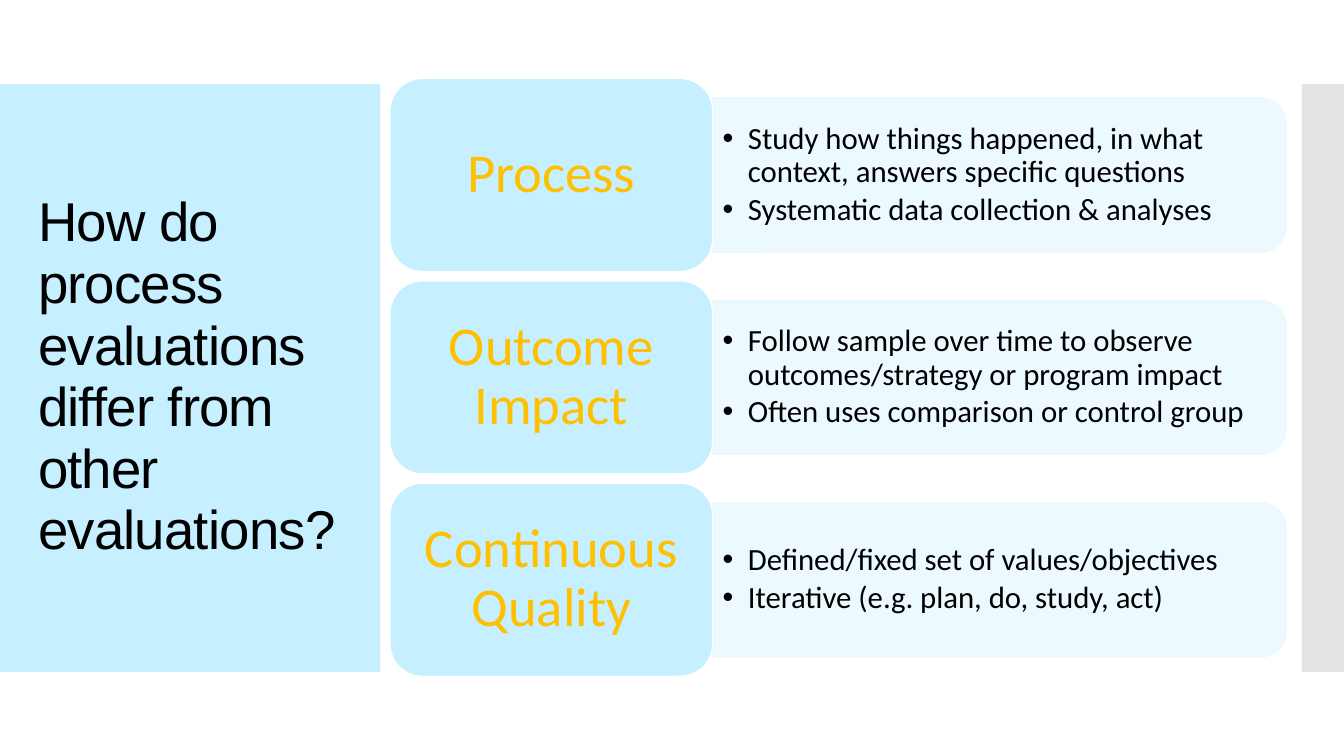
from lxml import etree
from pptx import Presentation
from pptx.dml.color import RGBColor
from pptx.enum.shapes import MSO_SHAPE
from pptx.enum.text import MSO_ANCHOR, PP_ALIGN
from pptx.oxml.ns import qn
from pptx.util import Cm, Pt

RECT = MSO_SHAPE.RECTANGLE
ROUNDED = MSO_SHAPE.ROUNDED_RECTANGLE
TOP_ROUNDED = MSO_SHAPE.ROUND_2_SAME_RECTANGLE
MIDDLE = MSO_ANCHOR.MIDDLE
LEFT, CENTER = PP_ALIGN.LEFT, PP_ALIGN.CENTER

TITLE = "How do process evaluations differ from other evaluations?"
ROWS = [
    ("Process", [
        "Study how things happened, in what context, answers specific questions",
        "Systematic data collection & analyses",
    ]),
    ("Outcome Impact", [
        "Follow sample over time to observe outcomes/strategy or program impact",
        "Often uses comparison or control group",
    ]),
    ("Continuous Quality", [
        "Defined/fixed set of values/objectives",
        "Iterative (e.g. plan, do, study, act)",
    ]),
]

SKY, PALE, GREY = "C6EFFF", "EAF9FF", "C8C8C8"
WHITE, BLACK, GOLD = "FFFFFF", "000000", "FFC000"

SLIDE_W, SLIDE_H = 33.87, 19.05
BAND_TOP, BAND_H = 2.12, 14.82
TITLE_W, EDGE_W = 9.58, 1.06
LABEL_X, LABEL_Y, LABEL_W, LABEL_H = 9.83, 1.98, 8.13, 4.86
ROW_PITCH = 5.1
PANEL_X, PANEL_W, PANEL_H = LABEL_X + LABEL_W, 14.45, 3.89
BULLETS_W, BULLETS_H = 14.25, 3.51


def paint(color_format, color, alpha=100):
    color_format.solid()
    color_format.fore_color.rgb = RGBColor.from_string(color)
    if alpha < 100:
        srgb = color_format._xPr.find(".//" + qn("a:srgbClr"))
        etree.SubElement(srgb, qn("a:alpha"), val=str(alpha * 1000))


def add_block(kind, x, y, w, h, color, alpha=100, line=None):
    sp = s.shapes.add_shape(kind, Cm(x), Cm(y), Cm(w), Cm(h))
    sp.shadow.inherit = False
    paint(sp.fill, color, alpha)
    if line:
        paint(sp.line.fill, line, alpha)
        sp.line.width = Pt(0.85)
    else:
        sp.line.fill.background()
    return sp


def add_text_box(x, y, w, h):
    return s.shapes.add_textbox(Cm(x), Cm(y), Cm(w), Cm(h))


def write(sp, lines, size, font, color, align=LEFT, inset=(0.25, 0.13),
          spacing=0.9, after=0, bullet=False, tracking=0):
    tf = sp.text_frame
    tf.word_wrap = True
    tf.vertical_anchor = MIDDLE
    tf.margin_left = tf.margin_right = Cm(inset[0])
    tf.margin_top = tf.margin_bottom = Cm(inset[1])
    for i, line in enumerate(lines):
        p = tf.paragraphs[0] if i == 0 else tf.add_paragraph()
        p.alignment = align
        p.line_spacing = spacing
        p.space_after = Pt(after)
        r = p.add_run()
        r.text = line
        r.font.size = Pt(size)
        r.font.name = font
        r.font.color.rgb = RGBColor.from_string(color)
        if tracking:
            r._r.get_or_add_rPr().set("spc", str(tracking))
        if bullet:
            pPr = p._p.get_or_add_pPr()
            pPr.set("marL", str(Cm(0.64)))
            pPr.set("indent", str(-Cm(0.64)))
            etree.SubElement(pPr, qn("a:buFont"), typeface="Arial")
            etree.SubElement(pPr, qn("a:buChar"), char="•")


prs = Presentation()
prs.slide_width, prs.slide_height = Cm(SLIDE_W), Cm(SLIDE_H)
s = prs.slides.add_slide(prs.slide_layouts[6])

add_block(RECT, 0, BAND_TOP, TITLE_W, BAND_H, SKY)
add_block(RECT, SLIDE_W - EDGE_W, BAND_TOP, EDGE_W, BAND_H, GREY, 50)
title = add_text_box(0.71, 3.12, 8.18, 12.78)
write(title, [TITLE], 39, "Arial", BLACK, spacing=0.94, tracking=-60)

for i, (name, points) in enumerate(ROWS):
    y = LABEL_Y + i * ROW_PITCH
    mid = y + LABEL_H / 2

    panel = add_block(TOP_ROUNDED, PANEL_X + (PANEL_W - PANEL_H) / 2,
                      mid - PANEL_W / 2, PANEL_H, PANEL_W, PALE, 90, PALE)
    panel.rotation = 90

    bullets = add_text_box(PANEL_X, mid - BULLETS_H / 2, BULLETS_W, BULLETS_H)
    write(bullets, points, 22, "Calibri", BLACK, after=3.3, bullet=True)

    label = add_block(ROUNDED, LABEL_X, y, LABEL_W, LABEL_H, SKY, line=WHITE)
    write(label, [name], 39, "Calibri", GOLD, CENTER, inset=(0.4, 0.2))

prs.save("out.pptx")
